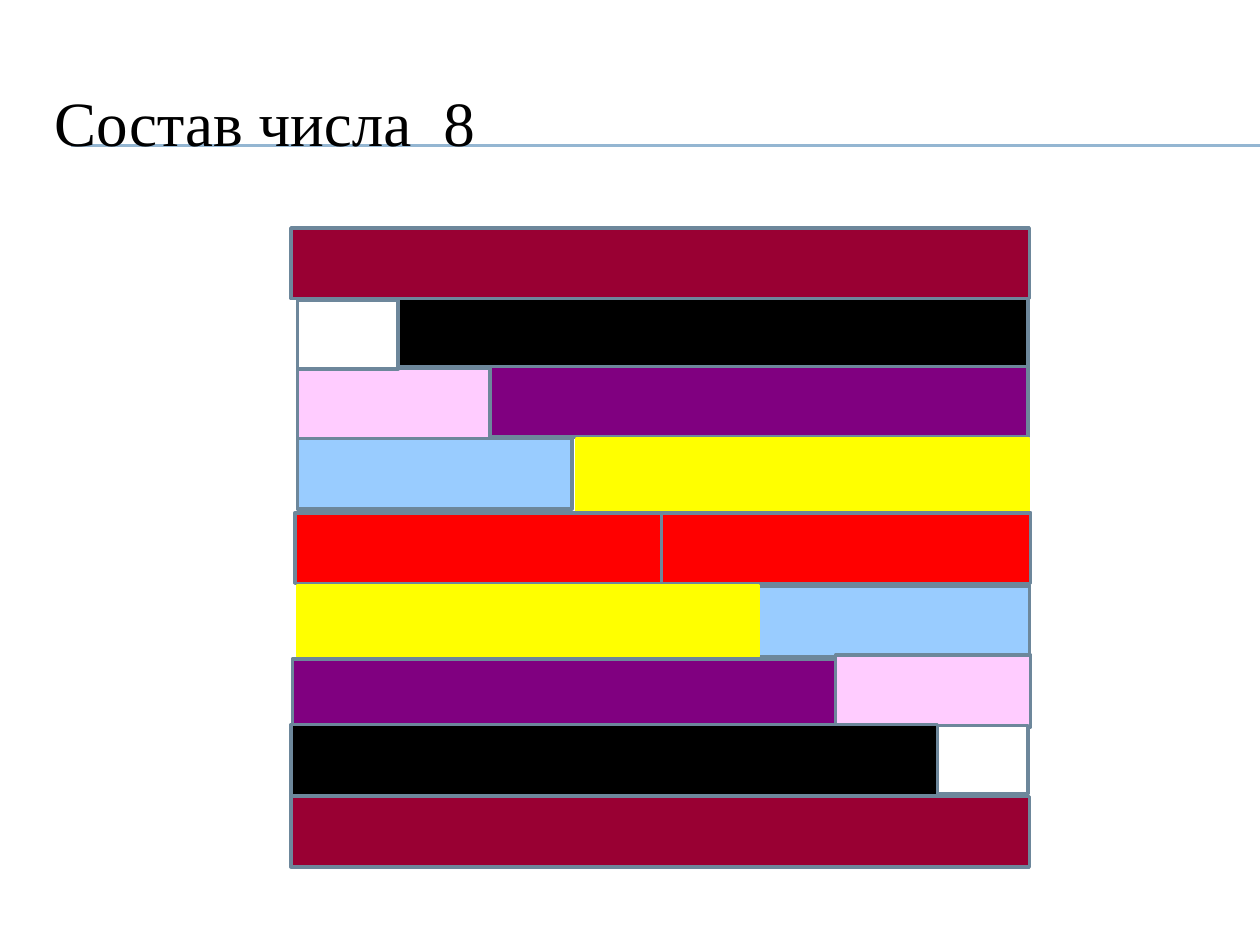
from dataclasses import dataclass

from lxml import etree
from pptx import Presentation
from pptx import util as u
from pptx.dml import color
from pptx.enum import shapes, text
from pptx.oxml import ns


@dataclass(frozen=True)
class Theme:
    font: str = "Times New Roman"
    size: int = 36
    ink: str = "000000"
    rule: str = "94B6D2"
    edge: str = "6D879B"
    white: str = "FFFFFF"
    pink: str = "FFCCFF"
    blue: str = "99CCFF"
    red: str = "FF0000"
    yellow: str = "FFFF00"
    purple: str = "800080"
    black: str = "000000"
    wine: str = "990033"


theme = Theme()

# Bars from back to front: colour, left, top, width, height within the tower
BARS = [
    ("black", 0.85, 0.53, 5, 0.57),
    ("purple", 1.55, 1.1, 4.3, 0.56),
    ("pink", 0.05, 1.11, 1.53, 0.56),
    ("yellow", 2.27, 1.67, 3.58, 0.6),
    ("blue", 0.05, 1.67, 2.18, 0.56),
    ("red", 2.92, 2.26, 2.95, 0.56),
    ("red", 0.03, 2.26, 2.91, 0.56),
    ("blue", 3.64, 2.84, 2.22, 0.56),
    ("pink", 4.32, 3.39, 1.55, 0.57),
    ("yellow", 0.05, 2.84, 3.66, 0.56),
    ("white", 5.11, 3.95, 0.74, 0.54),
    ("purple", 0.01, 3.42, 4.31, 0.57),
    ("black", 0, 3.94, 5.13, 0.57),
    ("wine", 0, 0, 5.86, 0.56),
    ("white", 0.05, 0.57, 0.8, 0.55),
    ("wine", 0, 4.51, 5.86, 0.56),
]


def rgb(code):
    return color.RGBColor.from_string(code)


def draw_title(slide, left, top, width, height):
    title = slide.shapes.title
    title.left, title.top = u.Inches(left), u.Inches(top)
    title.width, title.height = u.Inches(width), u.Inches(height)
    frame = title.text_frame
    frame.word_wrap = True
    frame.vertical_anchor = text.MSO_ANCHOR.MIDDLE
    para = frame.paragraphs[0]
    para.alignment = text.PP_ALIGN.LEFT
    para.font.name = theme.font
    para.font.size = u.Pt(theme.size)
    para.font.color.rgb = rgb(theme.ink)
    words, gap, number = [para.add_run() for _ in range(3)]
    words.text, gap.text, number.text = "Состав числа", " ", "8"
    # Widen the gap before the number by one more space width
    gap.font._element.set("spc", "900")


def draw_rules(slide, left, top, width):
    # Two hairlines side by side, behind the title
    for y in (top, top + 0.01):
        line = slide.shapes.add_connector(
            shapes.MSO_CONNECTOR.STRAIGHT,
            u.Inches(left), u.Inches(y), u.Inches(left + width), u.Inches(y))
        line.line.color.rgb = rgb(theme.rule)
        line.line.width = u.Pt(0.75)
        etree.SubElement(line._element.spPr, ns.qn("a:effectLst"))
        slide.shapes.title._element.addprevious(line._element)


def draw_tower(slide, left, top):
    tower = slide.shapes.add_group_shape()
    for name, x, y, width, height in BARS:
        bar = tower.shapes.add_shape(
            shapes.MSO_SHAPE.RECTANGLE,
            u.Inches(left + x), u.Inches(top + y),
            u.Inches(width), u.Inches(height))
        fill = getattr(theme, name)
        bar.shadow.inherit = False
        bar.fill.solid()
        bar.fill.fore_color.rgb = rgb(fill)
        bar.line.color.rgb = rgb(fill if name == "yellow" else theme.edge)
        bar.line.width = u.Pt(2)


def main():
    deck = Presentation()
    deck.slide_width, deck.slide_height = u.Inches(10), u.Inches(7.5)
    slide = deck.slides.add_slide(deck.slide_layouts.get_by_name("Title Only"))
    draw_title(slide, 0.33, 0.5, 9.5, 0.92)
    draw_rules(slide, 0.56, 1.15, 9.44)
    draw_tower(slide, 2.31, 1.81)
    deck.save("out.pptx")


if __name__ == "__main__":
    main()
